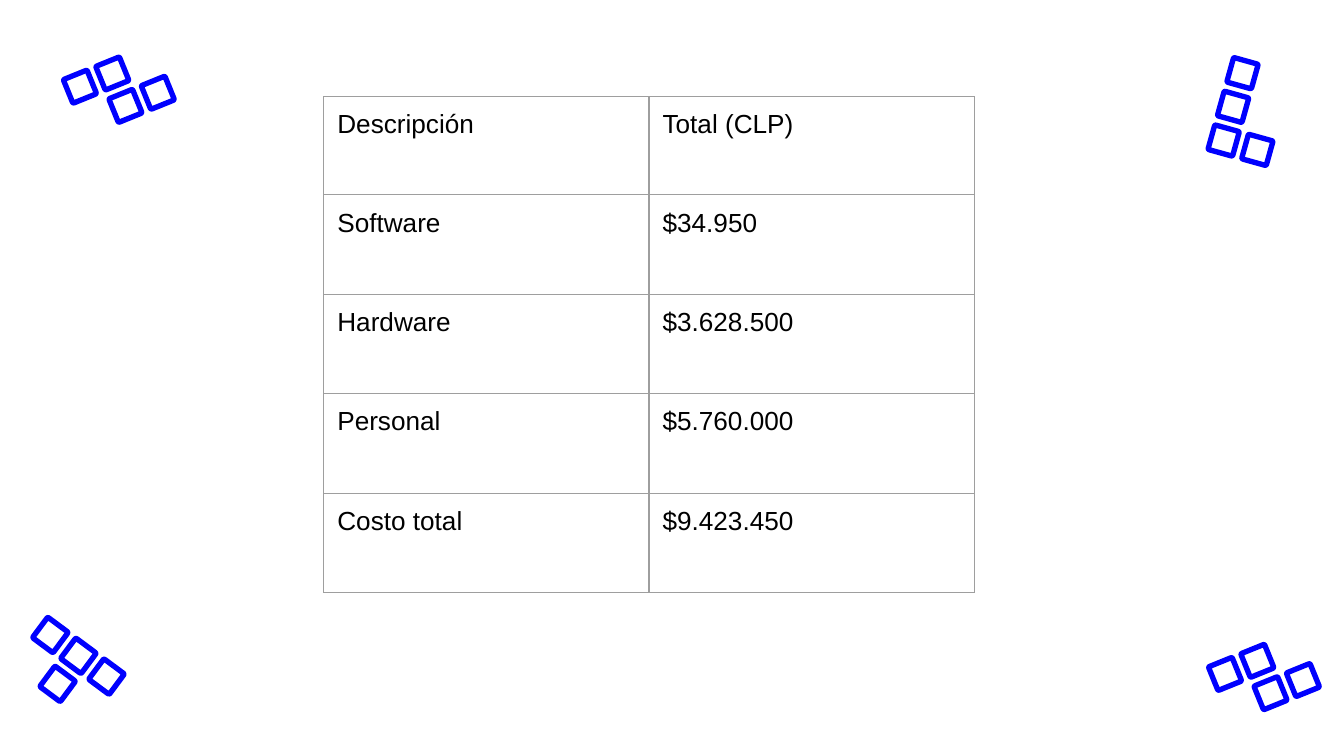
from math import cos, pi, radians, sin

from pptx import Presentation
from pptx.dml.color import RGBColor
from pptx.oxml.ns import qn
from pptx.util import Inches, Pt
from lxml.etree import SubElement

BLUE = RGBColor(0x00, 0x00, 0xFE)
BLACK = RGBColor(0x00, 0x00, 0x00)
GREY = RGBColor(0x9E, 0x9E, 0x9E)

SIDE, BORDER, RADIUS, STEP = 0.23, 0.04, 0.03, 0.26
UNITS = 1000  # freeform units per inch

# Widescreen 16:9 slide
prs = Presentation()
prs.slide_width, prs.slide_height = Inches(10), Inches(10 * 9 / 16)
s = prs.slides.add_slide(prs.slide_layouts[6])

# Outline of one tile: rounded outer square with a square hole
outer = []
for corner in range(4):
    middle = pi / 4 + corner * pi / 2
    for i in range(5):
        a = corner * pi / 2 + i * pi / 8
        outer.append(tuple(
            round(UNITS * ((SIDE / 2 - RADIUS) * (1 if f(middle) > 0 else -1)
                           + RADIUS * f(a)))
            for f in (cos, sin)))
h = round(UNITS * (SIDE / 2 - BORDER))
hole = [(-h, -h), (-h, h), (h, h), (h, -h)]

# Corner clusters: first tile's left and top, rotation, (column, row) of tiles
ZIGZAG = [(0, 0), (1, 0), (1, 1), (2, 1)]
clusters = [
    (0.26, 4.61, 36.6, [(0, 0), (1, 0), (2, 0), (1, 1)]),
    (9.13, 0.43, 15.6, [(0, 0), (0, 1), (0, 2), (1, 2)]),
    (0.48, 0.53, -22.1, ZIGZAG),
    (9.00, 4.90, -22.1, ZIGZAG),
]
for left, top, angle, tiles in clusters:
    group = s.shapes.add_group_shape()
    dx, dy = STEP * cos(radians(angle)), STEP * sin(radians(angle))
    for col, row in tiles:
        x = left + SIDE / 2 + col * dx - row * dy
        y = top + SIDE / 2 + col * dy + row * dx
        builder = group.shapes.build_freeform(*outer[0], scale=Inches(1) / UNITS)
        builder.add_line_segments(outer[1:], close=True)
        builder.move_to(*hole[0])
        builder.add_line_segments(hole[1:], close=True)
        tile = builder.convert_to_shape(Inches(x), Inches(y))
        tile.rotation = angle
        tile.fill.solid()
        tile.fill.fore_color.rgb = BLUE
        tile.line.fill.background()
        tile.shadow.inherit = False

# Cost table
costs = [
    ("Descripción", "Total (CLP)"),
    ("Software", "$34.950"),
    ("Hardware", "$3.628.500"),
    ("Personal", "$5.760.000"),
    ("Costo total", "$9.423.450"),
]
table = s.shapes.add_table(len(costs), 2, Inches(2.41), Inches(0.72),
                           Inches(4.84), Inches(3.69)).table
table.first_row = table.horz_banding = False
for column in table.columns:
    column.width = Inches(2.42)
for i, values in enumerate(costs):
    table.rows[i].height = Inches(0.74 if i else 0.73)
    for j, value in enumerate(values):
        cell = table.cell(i, j)
        cell.margin_left = cell.margin_right = Inches(0.1)
        cell.margin_top = cell.margin_bottom = Inches(0.1)
        r = cell.text_frame.paragraphs[0].add_run()
        r.text = value
        r.font.name, r.font.size = "Arial", Pt(14)
        r.font.color.rgb = BLACK
        # Borders come before the fill in the cell properties
        tcPr = cell._tc.get_or_add_tcPr()
        for edge in ("a:lnL", "a:lnR", "a:lnT", "a:lnB"):
            ln = SubElement(tcPr, qn(edge), w=str(Pt(0.75)))
            fill = SubElement(ln, qn("a:solidFill"))
            SubElement(fill, qn("a:srgbClr"), val=str(GREY))
        cell.fill.background()

prs.save("out.pptx")
